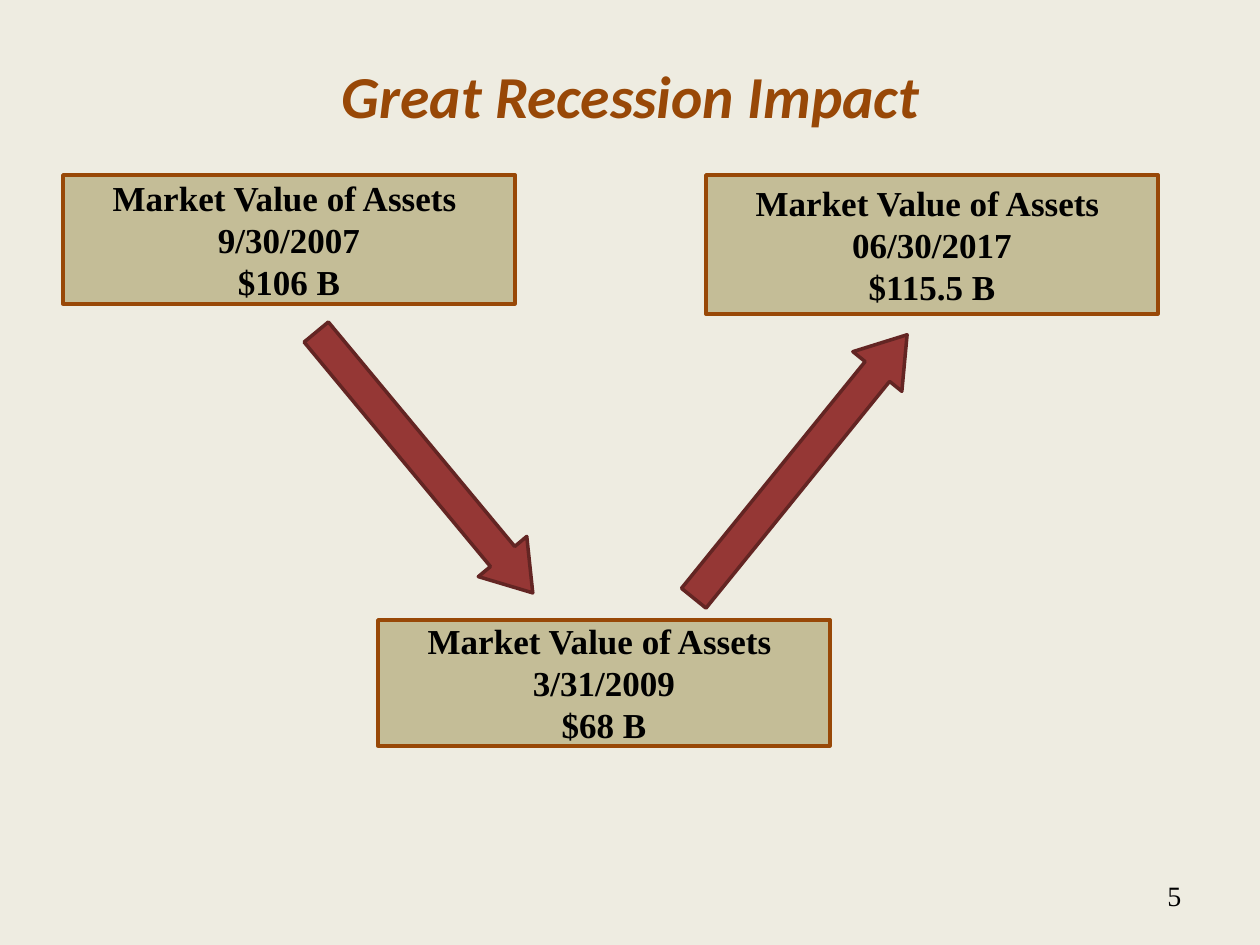
from pptx import Presentation
from pptx.dml.color import RGBColor
from pptx.enum.shapes import MSO_SHAPE as SHAPE
from pptx.enum.text import MSO_ANCHOR as ANCHOR, PP_ALIGN as ALIGN
from pptx.util import Pt

EMU_PER_PX = 914400 / 126
SERIF = "Times New Roman"
BROWN = "984807"
BOX_WIDTH = 452
ARROW_SIZE = (339, 63)


def px(n):
    return round(n * EMU_PER_PX)


def rgb(color):
    return RGBColor.from_string(color)


def paint(s, fill, line):
    s.shadow.inherit = False
    s.fill.solid()
    s.fill.fore_color.rgb = rgb(fill)
    s.line.color.rgb = rgb(line)
    s.line.width = Pt(2)


def write(s, lines, size, font=SERIF, color="000000", bold=False,
          italic=False, align=ALIGN.CENTER, anchor=ANCHOR.MIDDLE):
    tf = s.text_frame
    tf.word_wrap = True
    tf.vertical_anchor = anchor
    tf.text = "\n".join(lines)
    for p in tf.paragraphs:
        p.alignment = align
        f = p.font
        f.name, f.size, f.bold, f.italic = font, Pt(size), bold, italic
        f.color.rgb = rgb(color)


def add_text(slide, box, text, size, **style):
    s = slide.shapes.add_textbox(*map(px, box))
    write(s, [text], size, **style)


def add_value_box(slide, left, top, height, date, value):
    s = slide.shapes.add_shape(
        SHAPE.RECTANGLE, px(left), px(top), px(BOX_WIDTH), px(height))
    paint(s, "C4BD97", BROWN)
    write(s, [f"Market Value of Assets \v{date}", value], 20, bold=True)


def add_arrow(slide, left, top, rotation):
    s = slide.shapes.add_shape(
        SHAPE.RIGHT_ARROW, px(left), px(top), *map(px, ARROW_SIZE))
    s.adjustments[1] = 0.75
    s.rotation = rotation
    paint(s, "953735", "632523")


def main():
    prs = Presentation()
    prs.slide_width, prs.slide_height = px(1260), px(945)
    slide = prs.slides.add_slide(prs.slide_layouts[6])
    background = slide.background.fill
    background.solid()
    background.fore_color.rgb = rgb("EEECE1")

    add_text(slide, (53, 42, 1155, 105), "Great Recession Impact", 34,
             font="Calibri", color=BROWN, bold=True, italic=True)
    add_value_box(slide, 63, 175, 129, "9/30/2007", "$106 B")
    add_value_box(slide, 706, 175, 139, "06/30/2017", "$115.5 B")
    add_value_box(slide, 378, 620, 126, "3/31/2009", "$68 B")
    add_arrow(slide, 631, 435, 309)
    add_text(slide, (1155, 872, 73, 53), "5", 16,
             align=ALIGN.LEFT, anchor=ANCHOR.TOP)
    add_arrow(slide, 255, 431, 50.3)
    prs.save("out.pptx")


if __name__ == "__main__":
    main()
